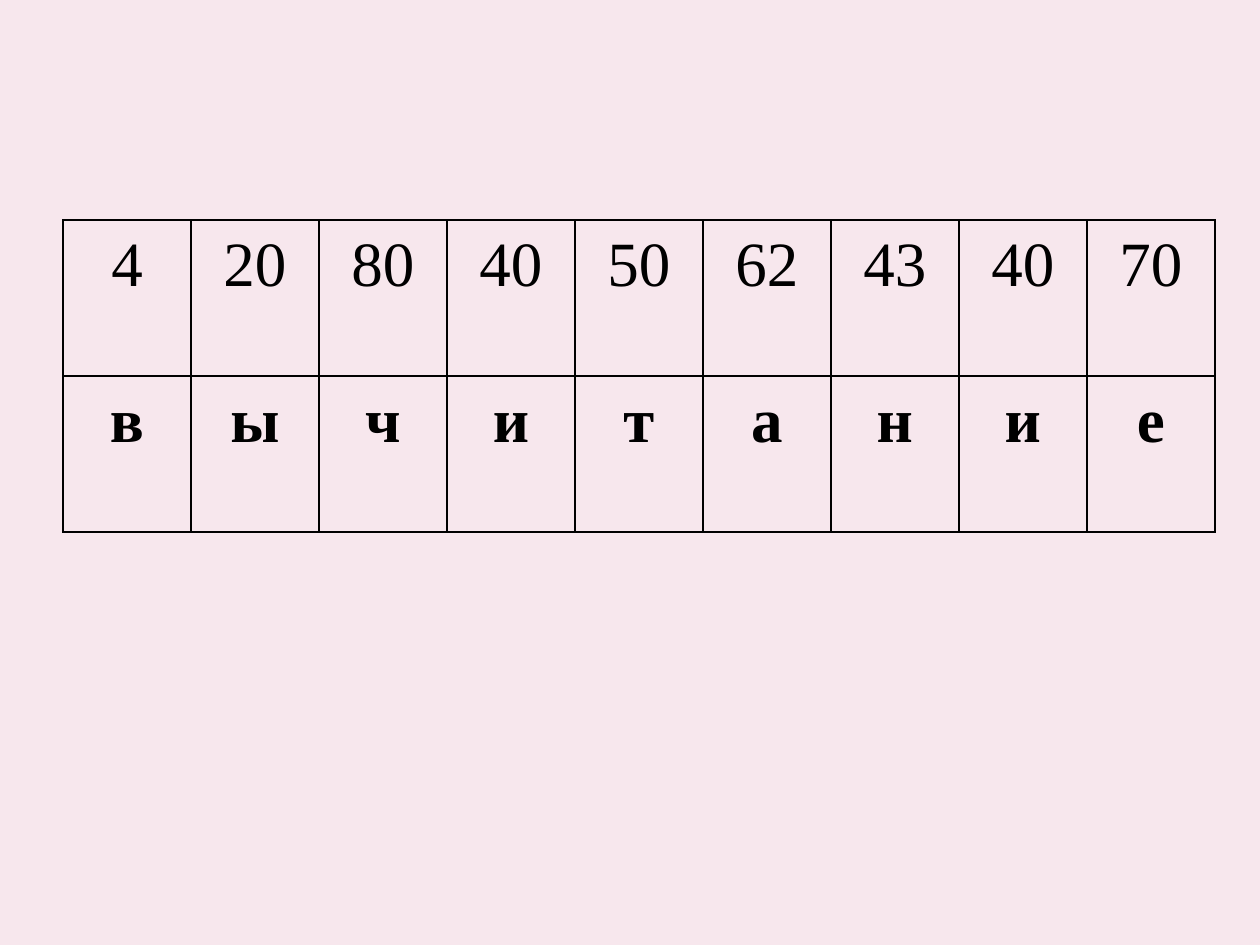
from lxml.etree import SubElement
from pptx import Presentation
from pptx.dml.color import RGBColor
from pptx.enum.text import PP_ALIGN
from pptx.oxml.ns import qn
from pptx.util import Pt

NUMBERS = [4, 20, 80, 40, 50, 62, 43, 40, 70]
LETTERS = "вычитание"

PX = 914400 // 126
SLIDE_WIDTH, SLIDE_HEIGHT = 1260, 945
LEFT, TOP = 63, 220
CELL_WIDTH, CELL_HEIGHT = 128, 156
SIDE_MARGIN = 9

PINK = RGBColor(0xF7, 0xE7, 0xED)
BLACK = RGBColor(0, 0, 0)
FONT = "Times New Roman"


def add_borders(cell):
    """Draw a thin black line on all four sides of the cell."""
    properties = cell._tc.get_or_add_tcPr()
    for position, side in enumerate(("a:lnL", "a:lnR", "a:lnT", "a:lnB")):
        line = SubElement(properties, qn(side), w=str(Pt(1)))
        fill = SubElement(line, qn("a:solidFill"))
        SubElement(fill, qn("a:srgbClr"), val=str(BLACK))
        properties.insert(position, line)


def fill_cell(cell, content, bold):
    cell.fill.background()
    add_borders(cell)
    cell.margin_left = cell.margin_right = SIDE_MARGIN * PX
    cell.margin_top = cell.margin_bottom = 0
    cell.text_frame.text = str(content)
    paragraph = cell.text_frame.paragraphs[0]
    paragraph.alignment = PP_ALIGN.CENTER
    paragraph.line_spacing = 1.15
    font = paragraph.runs[0].font
    font.name = FONT
    font.size = Pt(36)
    font.bold = bold
    font.color.rgb = BLACK


def main():
    presentation = Presentation()
    presentation.slide_width = SLIDE_WIDTH * PX
    presentation.slide_height = SLIDE_HEIGHT * PX
    slide = presentation.slides.add_slide(presentation.slide_layouts[6])
    slide.background.fill.solid()
    slide.background.fill.fore_color.rgb = PINK

    rows = [NUMBERS, LETTERS]
    count = len(NUMBERS)
    table = slide.shapes.add_table(
        len(rows), count, LEFT * PX, TOP * PX,
        count * CELL_WIDTH * PX, len(rows) * CELL_HEIGHT * PX).table
    table.first_row = table.horz_banding = False
    for column in table.columns:
        column.width = CELL_WIDTH * PX
    for row, contents in zip(table.rows, rows):
        row.height = CELL_HEIGHT * PX
        for cell, content in zip(row.cells, contents):
            fill_cell(cell, content, bold=contents is LETTERS)

    presentation.save("out.pptx")


if __name__ == "__main__":
    main()
